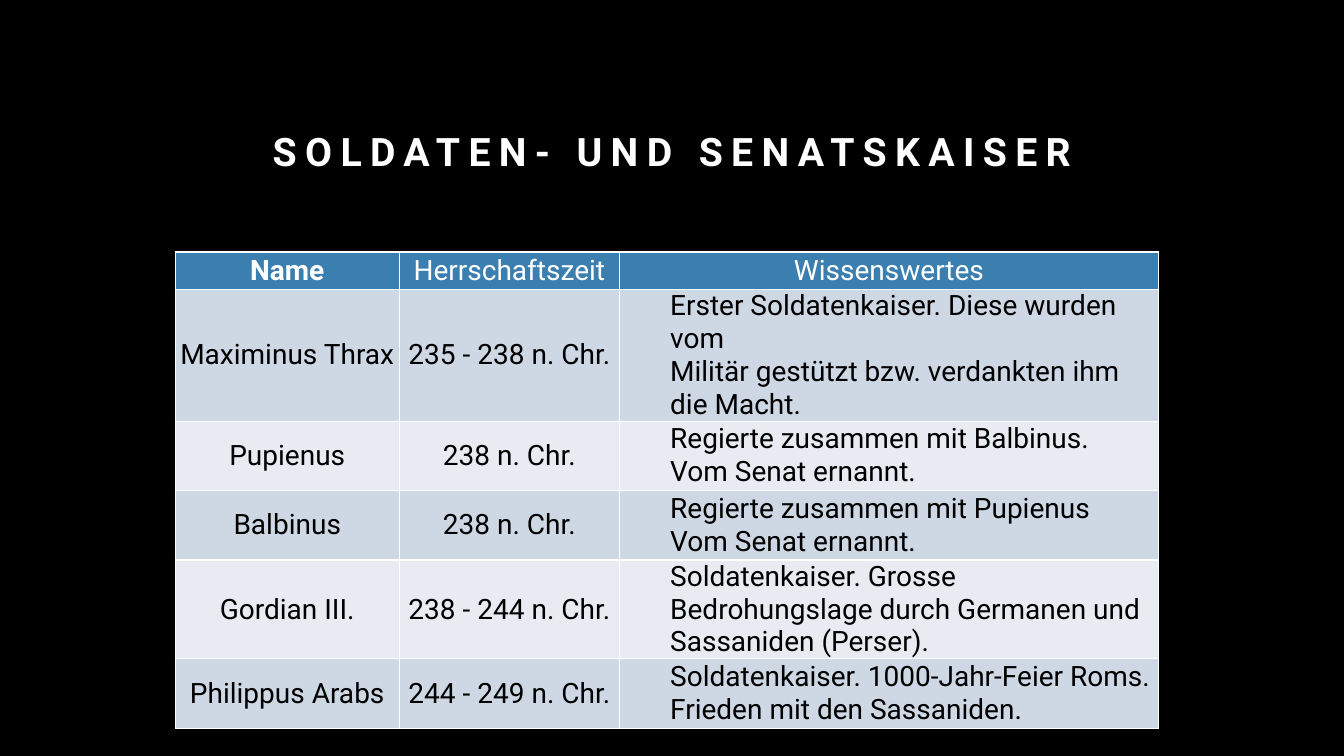
from lxml import etree
from pptx import Presentation
from pptx.dml.color import RGBColor
from pptx.enum.text import MSO_ANCHOR, MSO_AUTO_SIZE, PP_ALIGN
from pptx.oxml.ns import qn
from pptx.util import Cm, Pt

CENTER, LEFT = PP_ALIGN.CENTER, PP_ALIGN.LEFT
MIDDLE, BOTTOM = MSO_ANCHOR.MIDDLE, MSO_ANCHOR.BOTTOM
NO_FIT = MSO_AUTO_SIZE.NONE

WHITE, BLACK, BLUE = "FFFFFF", "000000", "3B7FB1"
BANDS = ["CED8E4", "E8ECF2"]
COLS = [5.64, 5.56, 13.57]
ROWS = [0.94, 2.59, 1.75, 1.75, 1.75, 1.75]
DATA = [
    ("Name", "Herrschaftszeit", "Wissenswertes"),
    ("Maximinus Thrax", "235 - 238 n. Chr.",
     "Erster Soldatenkaiser. Diese wurden vom\v"
     "Militär gestützt bzw. verdankten ihm die Macht."),
    ("Pupienus", "238 n. Chr.",
     "Regierte zusammen mit Balbinus.\vVom Senat ernannt."),
    ("Balbinus", "238 n. Chr.",
     "Regierte zusammen mit Pupienus\vVom Senat ernannt."),
    ("Gordian III.", "238 - 244 n. Chr.",
     "Soldatenkaiser. Grosse Bedrohungslage durch Germanen und "
     "Sassaniden (Perser)."),
    ("Philippus Arabs", "244 - 249 n. Chr.",
     "Soldatenkaiser. 1000-Jahr-Feier Roms.\vFrieden mit den Sassaniden."),
]


def paint(fill, color):
    fill.solid()
    fill.fore_color.rgb = RGBColor.from_string(color)


def apply(item, values):
    for name, value in values.items():
        setattr(item, name, value)


def style(run, size, color, bold):
    apply(run.font, {"name": "Roboto", "size": Pt(size), "bold": bold})
    paint(run.font.fill, color)


def edge(cell, color, width):
    """Draw a line on all four sides of a cell."""
    props = cell._tc.get_or_add_tcPr()
    for side in ("a:lnL", "a:lnR", "a:lnT", "a:lnB"):
        line = etree.SubElement(props, qn(side), w=str(Pt(width)))
        fill = etree.SubElement(line, qn("a:solidFill"))
        etree.SubElement(fill, qn("a:srgbClr"), val=color)


def add_title(slide, text, left, top, width, height):
    title = slide.shapes.title
    apply(title, {"left": Cm(left), "top": Cm(top),
                  "width": Cm(width), "height": Cm(height)})
    frame = title.text_frame
    frame.text = text
    apply(frame, {"vertical_anchor": BOTTOM, "word_wrap": True,
                  "auto_size": NO_FIT})
    para = frame.paragraphs[0]
    apply(para, {"alignment": CENTER, "line_spacing": 1.2})
    run = para.runs[0]
    style(run, 28, WHITE, True)
    run.font._element.set("spc", "600")  # letter spacing, 6 pt


def fill_cell(cell, text, row, col):
    head = row == 0
    note = col == 2 and not head
    apply(cell, {"text": text, "vertical_anchor": MIDDLE,
                 "margin_left": 0, "margin_right": 0,
                 "margin_top": 0, "margin_bottom": 0})
    edge(cell, WHITE, 1)
    paint(cell.fill, BLUE if head else BANDS[(row - 1) % 2])
    para = cell.text_frame.paragraphs[0]
    para.alignment = LEFT if note else CENTER
    if note:
        para.level = 1
        props = para._p.get_or_add_pPr()
        props.set("marL", str(Cm(1.27)))
        props.set("indent", "0")
    for run in para.runs:
        style(run, 20, WHITE if head else BLACK, head and col == 0)


def add_grid(slide, left, top):
    table = slide.shapes.add_table(
        len(ROWS), len(COLS), Cm(left), Cm(top),
        Cm(sum(COLS)), Cm(sum(ROWS))).table
    for col, width in zip(table.columns, COLS):
        col.width = Cm(width)
    for row, height in zip(table.rows, ROWS):
        row.height = Cm(height)
    for r, texts in enumerate(DATA):
        for c, text in enumerate(texts):
            fill_cell(table.cell(r, c), text, r, c)


def main():
    deck = Presentation()
    apply(deck, {"slide_width": Cm(33.87), "slide_height": Cm(19.05)})
    slide = deck.slides.add_slide(deck.slide_layouts[5])
    paint(slide.background.fill, BLACK)

    # Heading
    add_title(slide, "SOLDATEN- UND SENATSKAISER", 4.24, 2.11, 25.4, 2.41)
    # Table of emperors
    add_grid(slide, 4.42, 6.35)

    deck.save("out.pptx")


if __name__ == "__main__":
    main()
